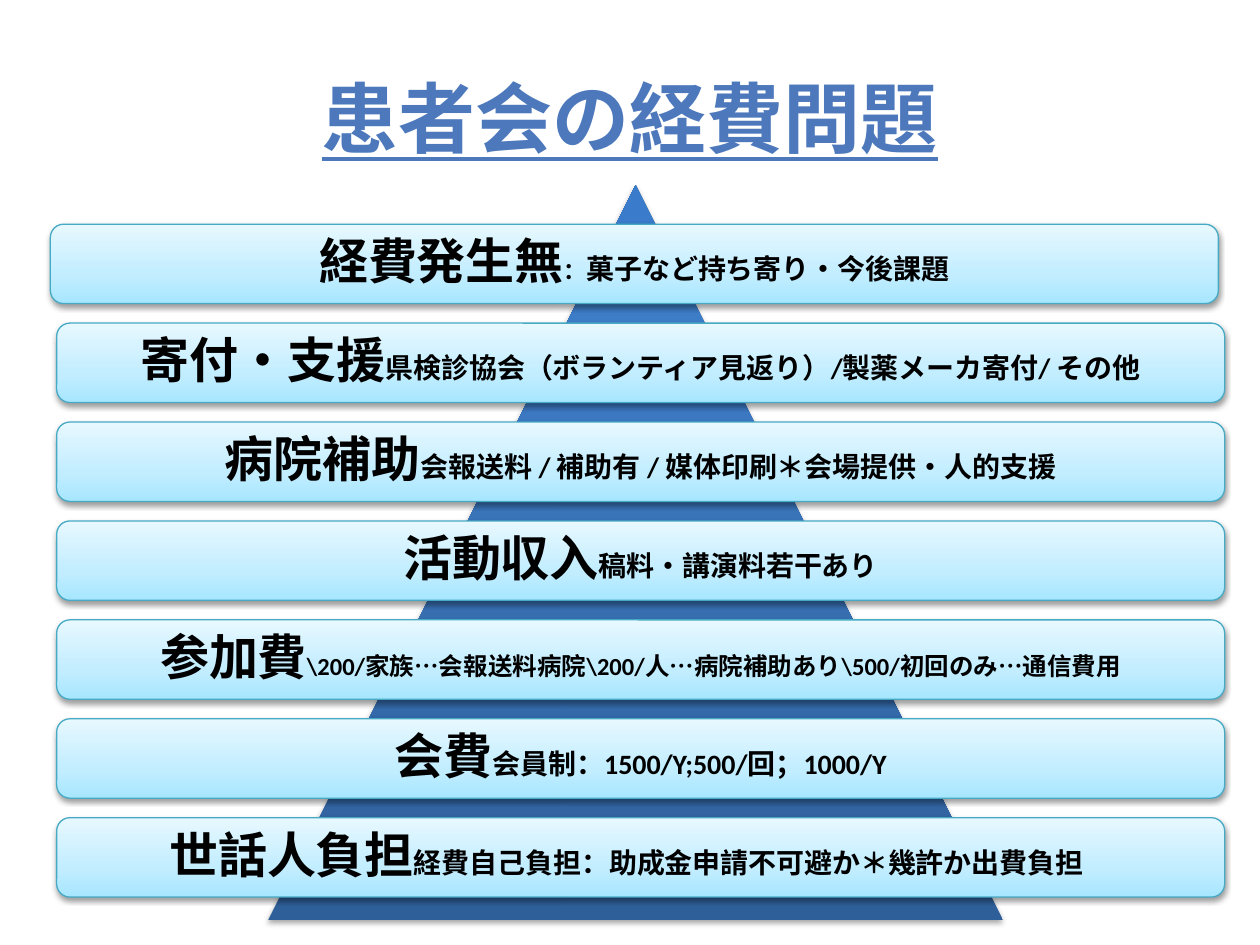
"""Build a slide of seven cost items stacked over a pyramid."""
from dataclasses import dataclass

from lxml import etree
from pptx import Presentation
from pptx import util as u
from pptx.dml.color import RGBColor
from pptx.enum import shapes, text
from pptx.oxml.ns import qn


@dataclass(frozen=True)
class Theme:
    font: str = "Calibri"
    title_color: str = "4D79BC"
    text_color: str = "000000"
    border: str = "46AAC5"
    pyramid: tuple = ((0, "2F5F99"), (80, "3D7CC7"), (100, "3A7CCB"))
    bar: tuple = ((0, "A7E6FF"), (35, "C1EDFF"), (100, "E7F8FF"))
    title_size: int = 44
    heading_size: int = 28
    detail_size: int = 16
    small_size: int = 14
    colon_size: int = 13


THEME = Theme()
COLUMNS, ROWS = 100, 75
BAR_LEFT, BAR_TOP, BAR_WIDTH, BAR_HEIGHT, BAR_PITCH = 4.5, 17.8, 92.7, 6.3, 7.85
ITEMS = [
    ("経費発生無", ("：", THEME.colon_size), ("菓子など持ち寄り・今後課題", THEME.detail_size)),
    ("寄付・支援", ("県検診協会（ボランティア見返り）/製薬メーカ寄付/ その他", THEME.detail_size)),
    ("病院補助", ("会報送料 / 補助有 / 媒体印刷＊会場提供・人的支援", THEME.detail_size)),
    ("活動収入", ("稿料・講演料若干あり", THEME.detail_size)),
    ("参加費", ("\\200/家族…会報送料病院\\200/人…病院補助あり\\500/初回のみ…通信費用",
             THEME.small_size)),
    ("会費", ("会員制：1500/Y;500/回；1000/Y", THEME.detail_size)),
    ("世話人負担", ("経費自己負担：助成金申請不可避か＊幾許か出費負担　", THEME.detail_size)),
]


def add_text(paragraph, content, *, size, color=THEME.text_color, underline=None):
    run = paragraph.add_run()
    run.text = content
    run.font.name = THEME.font
    run.font.size = u.Pt(size)
    run.font.bold = True
    run.font.underline = underline
    run.font.color.rgb = RGBColor.from_string(color)


def add_color(parent, tag, color, **attributes):
    element = etree.SubElement(parent, qn(tag), **attributes)
    return etree.SubElement(element, qn("a:srgbClr"), val=color)


class SlideBuilder:
    def __init__(self, presentation, theme):
        self.theme = theme
        self.column = presentation.slide_width / COLUMNS
        self.row = presentation.slide_height / ROWS
        self.slide = presentation.slides.add_slide(presentation.slide_layouts[6])

    def place(self, left, top, width, height):
        return (round(left * self.column), round(top * self.row),
                round(width * self.column), round(height * self.row))

    def center(self, shape, inset):
        frame = shape.text_frame
        frame.word_wrap = True
        frame.vertical_anchor = text.MSO_ANCHOR.MIDDLE
        frame.margin_left = frame.margin_right = u.Inches(inset)
        frame.margin_top = frame.margin_bottom = u.Inches(inset)
        paragraph = frame.paragraphs[0]
        paragraph.alignment = text.PP_ALIGN.CENTER
        return paragraph

    def title(self, content, *box):
        shape = self.slide.shapes.add_textbox(*self.place(*box))
        add_text(self.center(shape, 0.05), content, size=self.theme.title_size,
                 color=self.theme.title_color, underline=True)

    def gradient_shape(self, kind, box, stops, opacity, distance):
        shape = self.slide.shapes.add_shape(kind, *self.place(*box))
        shape.fill.gradient()
        shape.fill.gradient_angle = 90
        properties = shape.element.spPr
        stop_list = properties.find(".//" + qn("a:gsLst"))
        for stop in list(stop_list):
            stop_list.remove(stop)
        for position, color in stops:
            add_color(stop_list, "a:gs", color, pos=str(position * 1000))
        shape.shadow.inherit = False
        shadow = add_color(properties.find(qn("a:effectLst")), "a:outerShdw", "000000",
                           blurRad=str(u.Pt(3.1)), dist=str(u.Pt(distance)),
                           dir="5400000", rotWithShape="0")
        etree.SubElement(shadow, qn("a:alpha"), val=str(opacity * 1000))
        return shape

    def pyramid(self, *box):
        shape = self.gradient_shape(shapes.MSO_SHAPE.ISOSCELES_TRIANGLE, box,
                                    self.theme.pyramid, 35, 1.8)
        shape.line.fill.background()

    def bar(self, heading, details, *box):
        shape = self.gradient_shape(shapes.MSO_SHAPE.ROUNDED_RECTANGLE, box,
                                    self.theme.bar, 38, 1.6)
        shape.line.color.rgb = RGBColor.from_string(self.theme.border)
        shape.line.width = u.Pt(0.75)
        paragraph = self.center(shape, 0.15)
        paragraph.line_spacing = 0.9
        add_text(paragraph, heading, size=self.theme.heading_size)
        for content, size in details:
            add_text(paragraph, content, size=size)


def main():
    presentation = Presentation()
    presentation.slide_width, presentation.slide_height = u.Inches(10), u.Inches(7.5)
    builder = SlideBuilder(presentation, THEME)
    builder.title("患者会の経費問題", 5, 3, 90, 12.5)
    builder.pyramid(21.3, 14.7, 58.3, 58.3)
    for index, (heading, *details) in enumerate(ITEMS):
        left = BAR_LEFT if index else BAR_LEFT - 0.5
        builder.bar(heading, details, left, BAR_TOP + index * BAR_PITCH,
                    BAR_WIDTH, BAR_HEIGHT)
    presentation.save("out.pptx")


if __name__ == "__main__":
    main()
